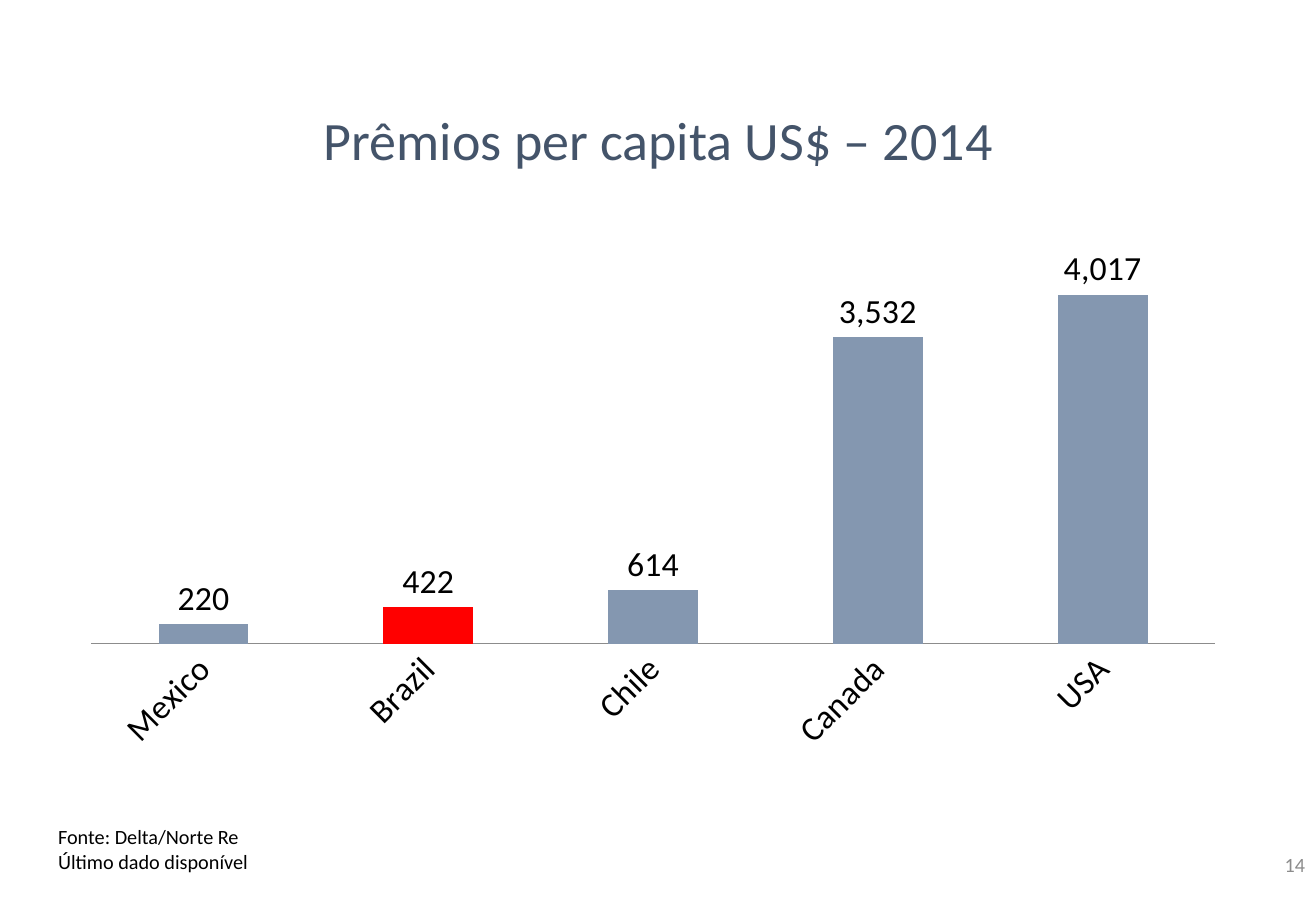
from dataclasses import dataclass

from pptx import Presentation
from pptx.chart.data import CategoryChartData
from pptx.dml.color import RGBColor as RGB
from pptx.enum.chart import XL_CHART_TYPE as CT, XL_LABEL_POSITION as LP, XL_TICK_MARK as TM
from pptx.enum.text import MSO_ANCHOR as ANCHOR, PP_ALIGN as ALIGN
from pptx.oxml import parse_xml
from pptx.oxml.ns import nsdecls
from pptx.util import Pt

PX = 9144  # 100 px to the inch


@dataclass(frozen=True)
class Theme:
    font: str = "Calibri"
    text: RGB = RGB(0x00, 0x00, 0x00)
    title: RGB = RGB(0x44, 0x54, 0x6A)
    muted: RGB = RGB(0x8C, 0x8C, 0x8C)
    bar: RGB = RGB(0x84, 0x97, 0xB0)
    highlight: RGB = RGB(0xFF, 0x00, 0x00)
    title_size: Pt = Pt(32)
    chart_size: Pt = Pt(20)
    small_size: Pt = Pt(12)


theme = Theme()


def px(*lengths):
    return [n * PX for n in lengths]


def add_text(box, text, size, color, align=ALIGN.LEFT, anchor=ANCHOR.TOP):
    tf = s.shapes.add_textbox(*px(*box)).text_frame
    tf.word_wrap = True
    tf.vertical_anchor = anchor
    tf.text = text
    for p in tf.paragraphs:
        p.alignment = align
        for r in p.runs:
            r.font.name, r.font.size = theme.font, size
            r.font.color.rgb = color


prs = Presentation()
prs.slide_width, prs.slide_height = px(1083, 750)
s = prs.slides.add_slide(prs.slide_layouts[6])

add_text((831, 692, 253, 40), "14", theme.small_size, theme.muted, ALIGN.RIGHT, ANCHOR.MIDDLE)
add_text((38, 674, 1024, 50), "Fonte: Delta/Norte Re\nÚltimo dado disponível",
         theme.small_size, theme.text)
add_text((11, 83, 1062, 95), "Prêmios per capita US$ – 2014",
         theme.title_size, theme.title, ALIGN.CENTER)

premiums = {"Mexico": 220, "Brazil": 422, "Chile": 614, "Canada": 3532, "USA": 4017}
data = CategoryChartData(number_format="#,##0")
data.categories = list(premiums)
data.add_series("Prêmios per capita", list(premiums.values()))
chart_x, chart_y, chart_w, chart_h = 55, 201, 964, 460
chart = s.shapes.add_chart(CT.COLUMN_CLUSTERED, *px(chart_x, chart_y, chart_w, chart_h), data).chart
chart.has_title = chart.has_legend = False
chart.font.name, chart.font.size = theme.font, theme.chart_size
chart.font.color.rgb = theme.text

value_axis = chart.value_axis
value_axis.minimum_scale, value_axis.maximum_scale = 0, 4500
value_axis.has_major_gridlines = False
value_axis.visible = False

country_axis = chart.category_axis
country_axis.major_tick_mark = country_axis.minor_tick_mark = TM.NONE
country_axis.format.line.color.rgb = theme.muted
country_axis.format.line.width = Pt(0.75)
labels_font = country_axis.tick_labels.font
labels_font.name, labels_font.size = theme.font, theme.chart_size
labels_font.color.rgb = theme.text
chart.element.xpath(".//c:catAx/c:txPr/a:bodyPr")[0].set("rot", "-2700000")

plot = chart.plots[0]
plot.gap_width = 150
plot.vary_by_categories = False
plot.has_data_labels = True
labels = plot.data_labels
labels.show_value = True
labels.position = LP.OUTSIDE_END
labels.number_format, labels.number_format_is_linked = "#,##0", False

series = plot.series[0]
for fill, color in ((series.format.fill, theme.bar),
                    (series.points[list(premiums).index("Brazil")].format.fill, theme.highlight)):
    fill.solid()
    fill.fore_color.rgb = color

# Fix the plot area inside the chart, leaving room for the slanted labels
plot_x, plot_y, plot_w, plot_h = 75, 208, 925, 322
plot_area = chart.element.xpath(".//c:plotArea")[0]
for old in plot_area.xpath("c:layout"):
    plot_area.remove(old)
plot_area.insert(0, parse_xml(
    f'<c:layout {nsdecls("c")}><c:manualLayout><c:layoutTarget val="inner"/>'
    '<c:xMode val="edge"/><c:yMode val="edge"/>'
    f'<c:x val="{(plot_x - chart_x) / chart_w}"/><c:y val="{(plot_y - chart_y) / chart_h}"/>'
    f'<c:w val="{plot_w / chart_w}"/><c:h val="{plot_h / chart_h}"/>'
    '</c:manualLayout></c:layout>'))

prs.save("out.pptx")
